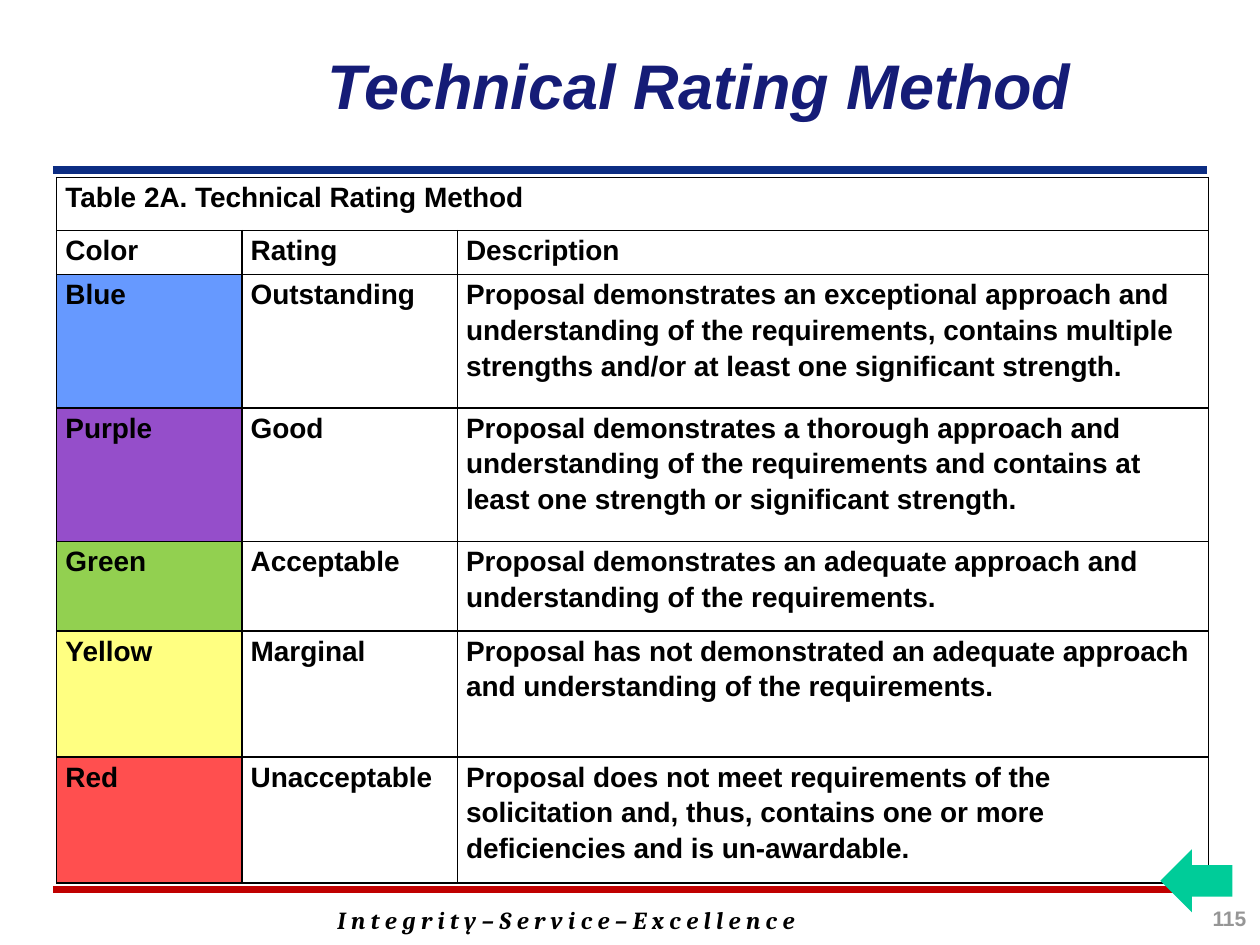
from lxml.etree import SubElement
from pptx import Presentation
from pptx.dml.color import RGBColor
from pptx.enum.shapes import MSO_CONNECTOR as Connector, MSO_SHAPE as Shape
from pptx.enum.text import MSO_ANCHOR as Anchor, PP_ALIGN as Align
from pptx.oxml.ns import qn
from pptx.util import Inches, Pt

BLACK = RGBColor(0x00, 0x00, 0x00)
NAVY = RGBColor(0x15, 0x1C, 0x77)
RULE_BLUE = RGBColor(0x0C, 0x2D, 0x83)
RULE_RED = RGBColor(0xC0, 0x00, 0x00)
GRAY = RGBColor(0x96, 0x96, 0x96)
TEAL = RGBColor(0x00, 0xCC, 0x99)

TITLE = "Technical Rating Method "
MOTTO = "I n t e g r i t y – S e r v i c e – E x c e l l e n c e"
PAGE_NUMBER = "115"
CAPTION = "Table 2A. Technical Rating Method"
HEADINGS = ("Color", "Rating", "Description")
RATINGS = [
    ("Blue", "Outstanding",
     "Proposal demonstrates an exceptional approach and understanding of the "
     "requirements, contains multiple strengths and/or at least one significant strength.",
     RGBColor(0x66, 0x99, 0xFF), 1.06),
    ("Purple", "Good",
     "Proposal demonstrates a thorough approach and understanding of the "
     "requirements and contains at least one strength or significant strength.",
     RGBColor(0x95, 0x4E, 0xCA), 1.06),
    ("Green", "Acceptable",
     "Proposal demonstrates an adequate approach and understanding of the requirements.",
     RGBColor(0x92, 0xD0, 0x50), 0.71),
    ("Yellow", "Marginal",
     "Proposal has not demonstrated an adequate approach and understanding of the requirements.",
     RGBColor(0xFF, 0xFF, 0x81), 1),
    ("Red", "Unacceptable",
     "Proposal does not meet requirements of the solicitation and, thus, "
     "contains one or more deficiencies and is un-awardable.",
     RGBColor(0xFF, 0x4F, 0x4F), 1),
]
COLUMN_WIDTHS = (1.47, 1.71, 5.96)
ROW_HEIGHTS = [0.42, 0.35] + [rating[4] for rating in RATINGS]
WIDTH, HEIGHT = 10, 7.5
MARGIN = 0.42


def write(frame, text, size, color=BLACK, font="Arial", italic=False, align=Align.LEFT):
    frame.word_wrap = True
    paragraph = frame.paragraphs[0]
    paragraph.alignment = align
    run = paragraph.add_run()
    run.text = text
    run.font.name = font
    run.font.size = Pt(size)
    run.font.bold = True
    run.font.italic = italic
    run.font.color.rgb = color
    return paragraph


def add_rule(slide, y, color):
    rule = slide.shapes.add_connector(
        Connector.STRAIGHT, Inches(MARGIN), Inches(y), Inches(WIDTH - MARGIN), Inches(y))
    rule.line.color.rgb = color
    rule.line.width = Pt(4.5)
    SubElement(rule._element.spPr, qn("a:effectLst"))


def add_text(slide, box, text, size, **style):
    shape = slide.shapes.add_textbox(*map(Inches, box))
    write(shape.text_frame, text, size, **style)


def add_borders(cell):
    properties = cell._tc.get_or_add_tcPr()
    for side in ("lnL", "lnR", "lnT", "lnB"):
        line = SubElement(properties, qn(f"a:{side}"), w=str(Pt(1)))
        fill = SubElement(line, qn("a:solidFill"))
        SubElement(fill, qn("a:srgbClr"), val=str(BLACK))


def add_rating_table(slide):
    rows = [(CAPTION, "", ""), HEADINGS] + [rating[:3] for rating in RATINGS]
    fills = [None, None] + [rating[3] for rating in RATINGS]
    table = slide.shapes.add_table(
        len(rows), len(HEADINGS), Inches(0.45), Inches(1.41),
        Inches(sum(COLUMN_WIDTHS)), Inches(sum(ROW_HEIGHTS))).table
    table.first_row = table.horz_banding = False
    for column, width in zip(table.columns, COLUMN_WIDTHS):
        column.width = Inches(width)
    for row, height in zip(table.rows, ROW_HEIGHTS):
        row.height = Inches(height)
    table.cell(0, 0).merge(table.cell(0, len(HEADINGS) - 1))
    for row, texts, color in zip(table.rows, rows, fills):
        for index, (cell, text) in enumerate(zip(row.cells, texts)):
            cell.margin_left = cell.margin_right = Inches(0.07)
            cell.margin_top = cell.margin_bottom = 0
            add_borders(cell)
            if color is not None and index == 0:
                cell.fill.solid()
                cell.fill.fore_color.rgb = color
            else:
                cell.fill.background()
            if text:
                write(cell.text_frame, text, 16).line_spacing = 1.15


def main():
    presentation = Presentation()
    presentation.slide_width = Inches(WIDTH)
    presentation.slide_height = Inches(HEIGHT)
    slide = presentation.slides.add_slide(presentation.slide_layouts[5])

    add_rule(slide, 7.06, RULE_RED)
    add_rule(slide, 1.35, RULE_BLUE)

    title = slide.shapes.title
    title.left, title.top, title.width, title.height = map(Inches, (1.82, 0.08, 6.92, 1.18))
    title.text_frame.vertical_anchor = Anchor.MIDDLE
    write(title.text_frame, TITLE, 36, color=NAVY, italic=True, align=Align.RIGHT)

    add_text(slide, (8.74, 7.14, 1.25, 0.33), PAGE_NUMBER, 12, color=GRAY, align=Align.RIGHT)
    add_rating_table(slide)

    arrow = slide.shapes.add_shape(
        Shape.RIGHT_ARROW, *map(Inches, (9.21, 6.74, 0.57, 0.5)))
    arrow.rotation = 180
    arrow.shadow.inherit = False
    arrow.fill.solid()
    arrow.fill.fore_color.rgb = TEAL
    arrow.line.fill.background()

    add_text(slide, (2.58, 7.13, 6.5, 0.34), MOTTO, 14, font="Cambria", italic=True)
    presentation.save("out.pptx")


if __name__ == "__main__":
    main()
